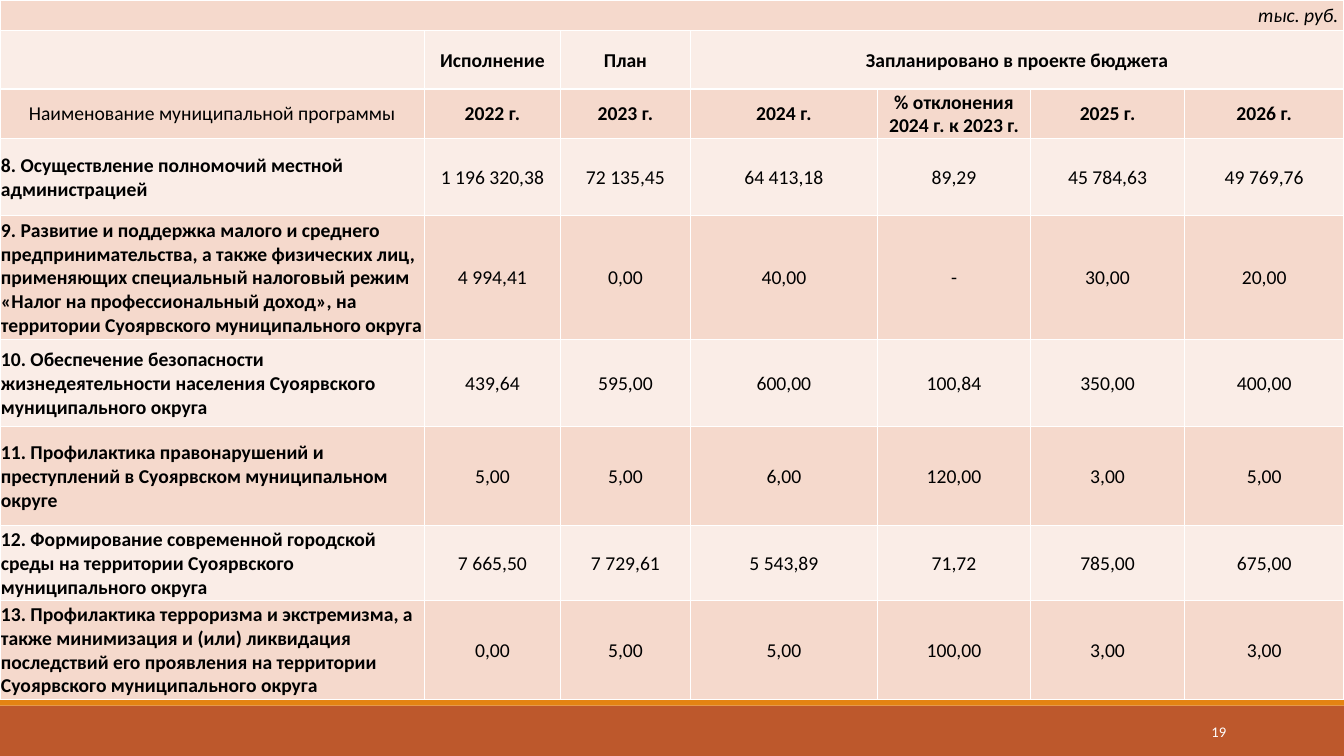
from dataclasses import dataclass

from lxml.etree import SubElement
from pptx import Presentation
from pptx.dml.color import RGBColor
from pptx.enum.shapes import MSO_SHAPE
from pptx.enum.text import MSO_ANCHOR, PP_ALIGN
from pptx.oxml.ns import qn
from pptx.util import Pt


@dataclass(frozen=True)
class Theme:
    font: str = "Calibri"
    text: str = "000000"
    white: str = "FFFFFF"
    footer: str = "BD582C"
    accent: str = "E48312"
    bands: tuple = ("F5D9CC", "FAEDE7")
    table_size: float = 14
    number_size: float = 10.5


theme = Theme()


def write(frame, text, align, size, color, **styles):
    para = frame.paragraphs[0]
    para.alignment = align
    span = para.add_run()
    span.text = text
    span.font.color.rgb = RGBColor.from_string(color)
    for name, value in {"name": theme.font, "size": Pt(size), **styles}.items():
        setattr(span.font, name, value)


def add_borders(cell):
    properties = cell._tc.get_or_add_tcPr()
    for side in ("lnL", "lnR", "lnT", "lnB"):
        line = SubElement(properties, qn(f"a:{side}"), w=str(Pt(1)))
        fill = SubElement(line, qn("a:solidFill"))
        SubElement(fill, qn("a:srgbClr"), val=theme.white)


deck = Presentation()
deck.slide_width, deck.slide_height = Pt(960), Pt(540)
page = deck.slides.add_slide(deck.slide_layouts[6])

# Footer
for top, height, color in ((504, 36, theme.footer), (499, 5, theme.accent)):
    bar = page.shapes.add_shape(MSO_SHAPE.RECTANGLE, 0, Pt(top), Pt(960), Pt(height))
    bar.shadow.inherit = False
    bar.fill.solid()
    bar.fill.fore_color.rgb = RGBColor.from_string(color)
    bar.line.fill.background()

number_box = page.shapes.add_textbox(Pt(780), Pt(508.4), Pt(103), Pt(28.8))
number_box.text_frame.word_wrap = True
number_box.text_frame.vertical_anchor = MSO_ANCHOR.MIDDLE
write(number_box.text_frame, "19", PP_ALIGN.RIGHT, theme.number_size, theme.white)

# Budget table
column_widths = (303.2, 97.2, 92.8, 133.6, 109.4, 110, 113.8)
row_heights = (22, 41.6, 35.3, 55.2, 88.6, 62.2, 70.8, 53.2, 71)
rows = (
    ("тыс. руб. ",),
    ("", "Исполнение", "План", "Запланировано в проекте бюджета"),
    ("Наименование муниципальной программы", "2022 г.", "2023 г.", "2024 г.",
     "% отклонения 2024 г. к 2023 г.", "2025 г.", "2026 г."),
    ("8. Осуществление полномочий местной администрацией",
     "1 196 320,38", "72 135,45", "64 413,18", "89,29", "45 784,63", "49 769,76"),
    ("9. Развитие и поддержка малого и среднего предпринимательства, а также "
     "физических лиц, применяющих специальный налоговый режим «Налог на "
     "профессиональный доход», на территории Суоярвского муниципального округа",
     "4 994,41", "0,00", "40,00", "-", "30,00", "20,00"),
    ("10. Обеспечение безопасности жизнедеятельности населения Суоярвского "
     "муниципального округа",
     "439,64", "595,00", "600,00", "100,84", "350,00", "400,00"),
    ("11. Профилактика правонарушений и преступлений в Суоярвском "
     "муниципальном округе",
     "5,00", "5,00", "6,00", "120,00", "3,00", "5,00"),
    ("12. Формирование современной городской среды на территории Суоярвского "
     "муниципального округа",
     "7 665,50", "7 729,61", "5 543,89", "71,72", "785,00", "675,00"),
    ("13. Профилактика терроризма и экстремизма, а также минимизация и (или) "
     "ликвидация последствий его проявления на территории Суоярвского "
     "муниципального округа",
     "0,00", "5,00", "5,00", "100,00", "3,00", "3,00"),
)
first_program_row = 3

table = page.shapes.add_table(
    len(rows), len(column_widths), 0, 0, Pt(960), Pt(sum(row_heights))
).table
table.first_row = table.horz_banding = False
for column, width in zip(table.columns, column_widths):
    column.width = Pt(width)
for row, height in zip(table.rows, row_heights):
    row.height = Pt(height)

cell_format = {
    "margin_left": Pt(0.7),
    "margin_right": Pt(0.7),
    "margin_top": Pt(0.7),
    "margin_bottom": 0,
    "vertical_anchor": MSO_ANCHOR.MIDDLE,
}
for r, texts in enumerate(rows):
    for c in range(len(column_widths)):
        cell = table.cell(r, c)
        add_borders(cell)
        cell.fill.solid()
        cell.fill.fore_color.rgb = RGBColor.from_string(theme.bands[r % 2])
        for name, value in cell_format.items():
            setattr(cell, name, value)
        if c >= len(texts) or not texts[c]:
            continue
        is_program = r >= first_program_row and c == 0
        is_heading = r < first_program_row and c > 0
        align = PP_ALIGN.RIGHT if r == 0 else PP_ALIGN.LEFT if is_program else PP_ALIGN.CENTER
        write(cell.text_frame, texts[c], align, theme.table_size, theme.text,
              bold=is_program or is_heading, italic=r == 0)

for r, first_column in ((0, 0), (1, 3)):
    table.cell(r, first_column).merge(table.cell(r, len(column_widths) - 1))

deck.save("out.pptx")
